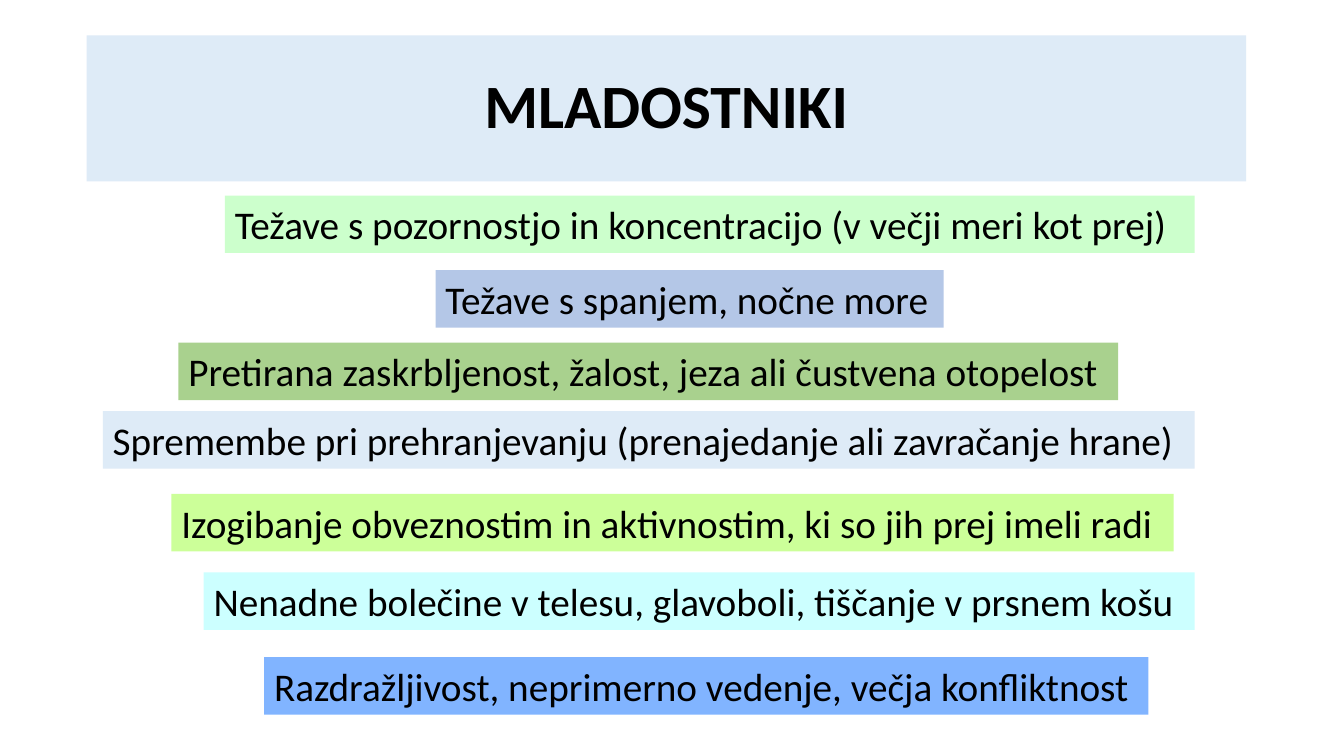
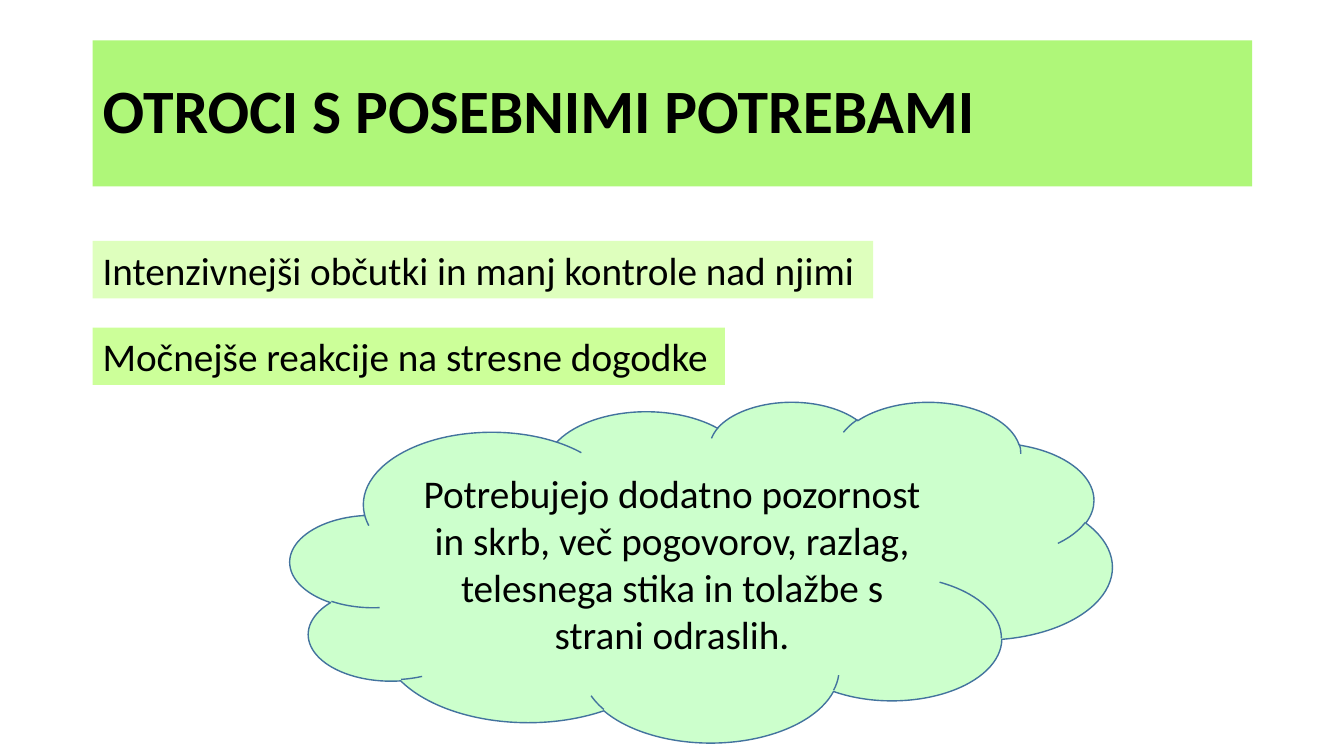
from dataclasses import dataclass

from pptx import Presentation
from pptx.dml.color import RGBColor
from pptx.enum.shapes import MSO_SHAPE
from pptx.enum.text import MSO_ANCHOR as ANCHOR, PP_ALIGN as ALIGN
from pptx.shapes.base import BaseShape
from pptx.slide import Slide
from pptx.util import Inches, Pt

FONT = "Calibri"
TITLE_SIZE = 44
BODY_SIZE = 28
TITLE_WIDTH = 11.5
TITLE_HEIGHT = 1.45
STRIP_HEIGHT = 0.57

COLORS = {
    "text": "000000",
    "pale_blue": "DEEBF7",
    "mint": "CCFFCC",
    "periwinkle": "B4C7E7",
    "sage": "A9D18E",
    "lime": "CCFF99",
    "aqua": "CCFFFF",
    "sky": "81B4FF",
    "bright_green": "AFF779",
    "pale_lime": "DEFFBD",
    "cloud_line": "43739E",
}


@dataclass(frozen=True)
class Title:
    text: str
    left: float
    top: float
    color: str
    align: ALIGN


@dataclass(frozen=True)
class Strip:
    text: str
    left: float
    top: float
    width: float
    color: str


TEENAGER_TITLE = Title("MLADOSTNIKI", 0.86, 0.35, "pale_blue", ALIGN.CENTER)
TEENAGER_STRIPS = [
    Strip("Težave s pozornostjo in koncentracijo (v večji meri kot prej)",
          2.23, 1.94, 9.62, "mint"),
    Strip("Težave s spanjem, nočne more", 4.32, 2.68, 5.04, "periwinkle"),
    Strip("Pretirana zaskrbljenost, žalost, jeza ali čustvena otopelost",
          1.77, 3.4, 9.32, "sage"),
    Strip("Spremembe pri prehranjevanju (prenajedanje ali zavračanje hrane)",
          1.02, 4.08, 10.83, "pale_blue"),
    Strip("Izogibanje obveznostim in aktivnostim, ki so jih prej imeli radi",
          1.7, 4.9, 9.94, "lime"),
    Strip("Nenadne bolečine v telesu, glavoboli, tiščanje v prsnem košu",
          2.02, 5.68, 9.83, "aqua"),
    Strip("Razdražljivost, neprimerno vedenje, večja konfliktnost",
          2.62, 6.52, 8.77, "sky"),
]

NEEDS_TITLE = Title("OTROCI S POSEBNIMI POTREBAMI", 0.92, 0.4,
                    "bright_green", ALIGN.LEFT)
NEEDS_STRIPS = [
    Strip("Intenzivnejši občutki in manj kontrole nad njimi",
          0.92, 2.39, 7.74, "pale_lime"),
    Strip("Močnejše reakcije na stresne dogodke", 0.92, 3.25, 6.27, "lime"),
]
CLOUD_TEXT = ("Potrebujejo dodatno pozornost in skrb, več pogovorov, razlag, "
              "telesnega stika in tolažbe s strani odraslih.")


def rgb(name: str) -> RGBColor:
    return RGBColor.from_string(COLORS[name])


def fill_with_text(sp: BaseShape, text: str, color: str, size: int = BODY_SIZE,
                   bold: bool = False, align: ALIGN = ALIGN.LEFT,
                   anchor: ANCHOR = ANCHOR.TOP) -> None:
    sp.fill.solid()
    sp.fill.fore_color.rgb = rgb(color)
    tf = sp.text_frame
    tf.word_wrap = True
    tf.vertical_anchor = anchor
    p = tf.paragraphs[0]
    p.text = text
    p.alignment = align
    font = p.runs[0].font
    font.name = FONT
    font.size = Pt(size)
    font.bold = bold
    font.color.rgb = rgb("text")


def add_title(s: Slide, title: Title) -> None:
    sp = s.shapes.add_textbox(Inches(title.left), Inches(title.top),
                              Inches(TITLE_WIDTH), Inches(TITLE_HEIGHT))
    fill_with_text(sp, title.text, title.color, TITLE_SIZE, True,
                   title.align, ANCHOR.MIDDLE)
    sp.text_frame.paragraphs[0].line_spacing = 0.9


def add_strip(s: Slide, strip: Strip) -> None:
    sp = s.shapes.add_textbox(Inches(strip.left), Inches(strip.top),
                              Inches(strip.width), Inches(STRIP_HEIGHT))
    fill_with_text(sp, strip.text, strip.color)


def add_cloud(s: Slide) -> None:
    sp = s.shapes.add_shape(MSO_SHAPE.CLOUD, Inches(2.88), Inches(3.98),
                            Inches(8.15), Inches(3.38))
    sp.shadow.inherit = False
    sp.line.color.rgb = rgb("cloud_line")
    sp.line.width = Pt(1)
    fill_with_text(sp, CLOUD_TEXT, "mint", align=ALIGN.CENTER,
                   anchor=ANCHOR.MIDDLE)


def add_topic(prs: Presentation, title: Title, strips: list[Strip]) -> Slide:
    s = prs.slides.add_slide(prs.slide_layouts[6])
    add_title(s, title)
    for strip in strips:
        add_strip(s, strip)
    return s


def main() -> None:
    prs = Presentation()
    prs.slide_width = Inches(13.33)
    prs.slide_height = Inches(7.5)
    add_topic(prs, TEENAGER_TITLE, TEENAGER_STRIPS)
    add_cloud(add_topic(prs, NEEDS_TITLE, NEEDS_STRIPS))
    prs.save("out.pptx")


if __name__ == "__main__":
    main()
